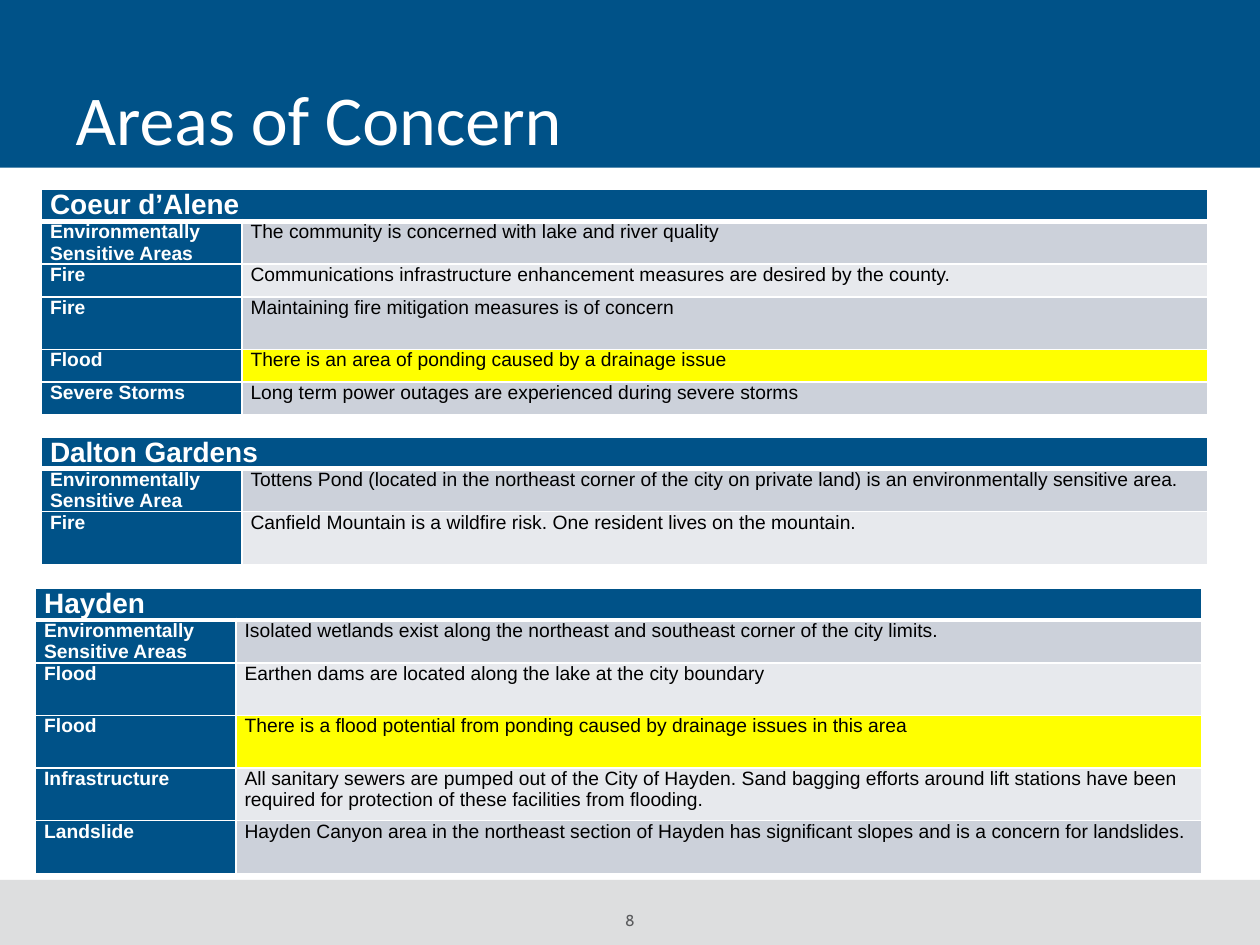
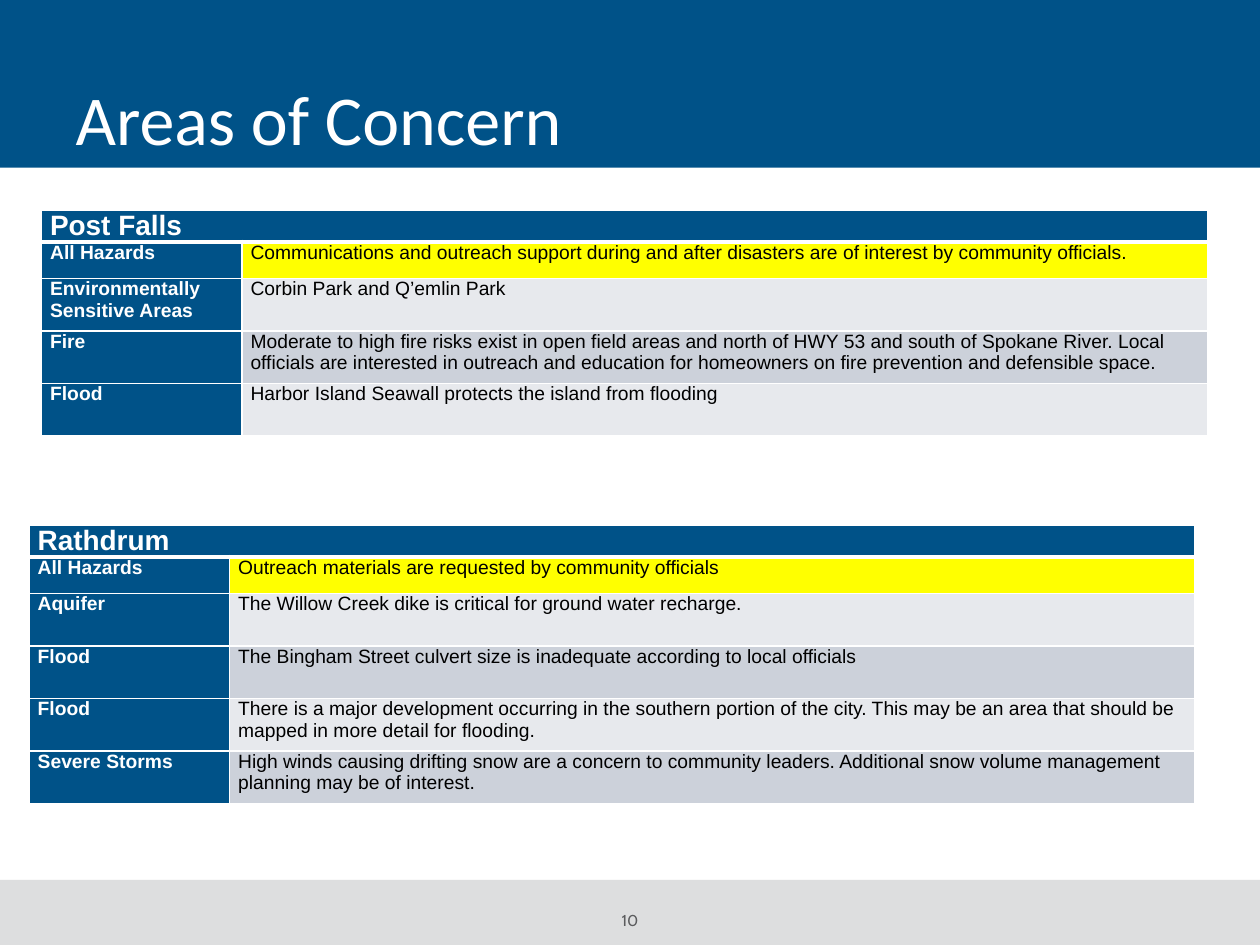
from dataclasses import dataclass

from lxml.etree import SubElement
from pptx import Presentation
from pptx.dml.color import RGBColor
from pptx.enum.shapes import MSO_SHAPE
from pptx.enum.text import MSO_ANCHOR, MSO_AUTO_SIZE, PP_ALIGN
from pptx.oxml.ns import qn
from pptx.util import Cm, Pt


@dataclass(frozen=True)
class Theme:
    blue: str = "005288"
    grey: str = "DDDEDF"
    dark: str = "CCD1DA"
    light: str = "E7E9ED"
    mark: str = "FFFF00"
    white: str = "FFFFFF"
    black: str = "000000"
    muted: str = "5B5C5E"
    title: int = 40
    head: int = 16
    body: int = 11
    foot: int = 9


@dataclass(frozen=True)
class Row:
    label: str
    text: str
    high: float
    mark: bool = False


@dataclass(frozen=True)
class Town:
    name: str
    left: float
    top: float
    rows: tuple[Row, ...]


@dataclass(frozen=True)
class Page:
    number: int
    towns: tuple[Town, ...]


THEME = Theme()
WIDE, TALL = 25.4, 19.05
COLS = (4.04, 19.46)
SLIM, MID, FULL = 0.66, 0.73, 1.06
THIN, THICK = 1, 3
PAD = {"margin_left": Cm(0.17), "margin_right": Cm(0.17),
       "margin_top": 0, "margin_bottom": 0}
BARE = dict.fromkeys(PAD, 0)

PAGES = (
    Page(8, (
        Town("Coeur d’Alene", 0.84, 3.82, (
            Row("Environmentally Sensitive Areas",
                "The community is concerned with lake and river quality", SLIM),
            Row("Fire", "Communications infrastructure enhancement measures are "
                "desired by the county.", SLIM),
            Row("Fire", "Maintaining fire mitigation measures is of concern", FULL),
            Row("Flood", "There is an area of ponding caused by a drainage issue",
                SLIM, True),
            Row("Severe Storms", "Long term power outages are experienced during "
                "severe storms", SLIM),
        )),
        Town("Dalton Gardens", 0.84, 8.81, (
            Row("Environmentally Sensitive Area",
                "Tottens Pond (located in the northeast corner of the city on "
                "private land) is an environmentally sensitive area.", MID),
            Row("Fire", "Canfield Mountain is a wildfire risk. One resident lives "
                "on the mountain.", FULL),
        )),
        Town("Hayden", 0.72, 11.86, (
            Row("Environmentally Sensitive Areas",
                "Isolated wetlands exist along the northeast and southeast corner "
                "of the city limits.", MID),
            Row("Flood", "Earthen dams are located along the lake at the city "
                "boundary", FULL),
            Row("Flood", "There is a flood potential from ponding caused by "
                "drainage issues in this area", FULL, True),
            Row("Infrastructure",
                "All sanitary sewers are pumped out of the City of Hayden. Sand "
                "bagging efforts around lift stations have been required for "
                "protection of these facilities from flooding.", FULL),
            Row("Landslide", "Hayden Canyon area in the northeast section of Hayden "
                "has significant slopes and is a concern for landslides.", FULL),
        )),
    )),
    Page(10, (
        Town("Post Falls", 0.84, 4.24, (
            Row("All Hazards", "Communications and outreach support during and "
                "after disasters are of interest by community officials.",
                MID, True),
            Row("Environmentally Sensitive Areas", "Corbin Park and Q’emlin Park",
                FULL),
            Row("Fire", "Moderate to high fire risks exist in open field areas and "
                "north of HWY 53 and south of Spokane River. Local officials are "
                "interested in outreach and education for homeowners on fire "
                "prevention and defensible space.", FULL),
            Row("Flood", "Harbor Island Seawall protects the island from flooding",
                FULL),
        )),
        Town("Rathdrum", 0.59, 10.59, (
            Row("All Hazards", "Outreach materials are requested by community "
                "officials", MID, True),
            Row("Aquifer", "The Willow Creek dike is critical for ground water "
                "recharge.", FULL),
            Row("Flood", "The Bingham Street culvert size is inadequate according "
                "to local officials", FULL),
            Row("Flood", "There is a major development occurring in the southern "
                "portion of the city. This may be an area that should be mapped in "
                "more detail for flooding.", FULL),
            Row("Severe Storms", "High winds causing drifting snow are a concern to "
                "community leaders. Additional snow volume management planning may "
                "be of interest.", FULL),
        )),
    )),
)


def apply(target, values: dict) -> None:
    for name, value in values.items():
        setattr(target, name, value)


def write(frame, text: str, size: int, tint: str, face: str = "Arial",
          bold: bool = False, **layout) -> None:
    """Fill a text frame with one styled paragraph."""
    frame.text = text
    para = frame.paragraphs[0]
    apply(para, layout)
    font = para.runs[0].font
    apply(font, {"name": face, "size": Pt(size), "bold": bold})
    font.color.rgb = RGBColor.from_string(tint)


def add_band(slide, top: float, high: float, tint: str) -> None:
    band = slide.shapes.add_shape(MSO_SHAPE.RECTANGLE, 0, Cm(top), Cm(WIDE), Cm(high))
    band.shadow.inherit = False
    band.fill.solid()
    band.fill.fore_color.rgb = RGBColor.from_string(tint)
    band.line.fill.background()


def add_title(slide) -> None:
    title = slide.shapes.title
    apply(title, {"left": Cm(1.27), "top": Cm(0.13),
                  "width": Cm(22.86), "height": Cm(3.2)})
    apply(title.text_frame, {"vertical_anchor": MSO_ANCHOR.BOTTOM, "word_wrap": True,
                             "auto_size": MSO_AUTO_SIZE.NONE})
    write(title.text_frame, "Areas of Concern", THEME.title, THEME.white, "Calibri",
          alignment=PP_ALIGN.LEFT, line_spacing=0.8)
    # Bring the title in front of the bands.
    title.element.getparent().append(title.element)


def add_foot(slide, number: int) -> None:
    box = slide.shapes.add_textbox(Cm(10.58), Cm(18.36), Cm(4.24), Cm(0.38))
    apply(box.text_frame, BARE | {"word_wrap": True})
    write(box.text_frame, str(number), THEME.foot, THEME.muted, "Cabin",
          alignment=PP_ALIGN.CENTER)


def edge(cell, top: int, base: int) -> None:
    """Draw white borders, with the given top and bottom widths in points."""
    props = cell._tc.get_or_add_tcPr()
    for side, width in {"L": THIN, "R": THIN, "T": top, "B": base}.items():
        line = SubElement(props, qn(f"a:ln{side}"), w=str(Pt(width)))
        fill = SubElement(line, qn("a:solidFill"))
        SubElement(fill, qn("a:srgbClr"), val=THEME.white)


def style(cell, tint: str, top: int = THIN, base: int = THIN) -> None:
    edge(cell, top, base)
    apply(cell, PAD)
    cell.fill.solid()
    cell.fill.fore_color.rgb = RGBColor.from_string(tint)


def add_town(slide, town: Town) -> None:
    highs = [SLIM - 0.02] + [row.high for row in town.rows]
    table = slide.shapes.add_table(
        len(highs), len(COLS), Cm(town.left), Cm(town.top),
        Cm(sum(COLS)), Cm(sum(highs))).table
    for column, width in zip(table.columns, COLS):
        column.width = Cm(width)
    for line, high in zip(table.rows, highs):
        line.height = Cm(high)

    head = table.cell(0, 0)
    head.merge(table.cell(0, 1))
    for cell in table.rows[0].cells:
        style(cell, THEME.blue, base=THICK)
    write(head.text_frame, town.name, THEME.head, THEME.white, bold=True)

    for index, row in enumerate(town.rows, 1):
        label, text = table.rows[index].cells
        stripe = THEME.dark if index % 2 else THEME.light
        top = THICK if index == 1 else THIN
        style(label, THEME.blue, top)
        style(text, THEME.mark if row.mark else stripe, top)
        write(label.text_frame, row.label, THEME.body, THEME.white, bold=True)
        write(text.text_frame, row.text, THEME.body, THEME.black)


def main() -> None:
    deck = Presentation()
    apply(deck, {"slide_width": Cm(WIDE), "slide_height": Cm(TALL)})
    for page in PAGES:
        slide = deck.slides.add_slide(deck.slide_layouts.get_by_name("Title Only"))
        add_band(slide, 17.74, TALL - 17.74, THEME.grey)
        add_foot(slide, page.number)
        add_band(slide, 0, 3.38, THEME.blue)
        add_title(slide)
        for town in page.towns:
            add_town(slide, town)
    deck.save("out.pptx")


if __name__ == "__main__":
    main()
